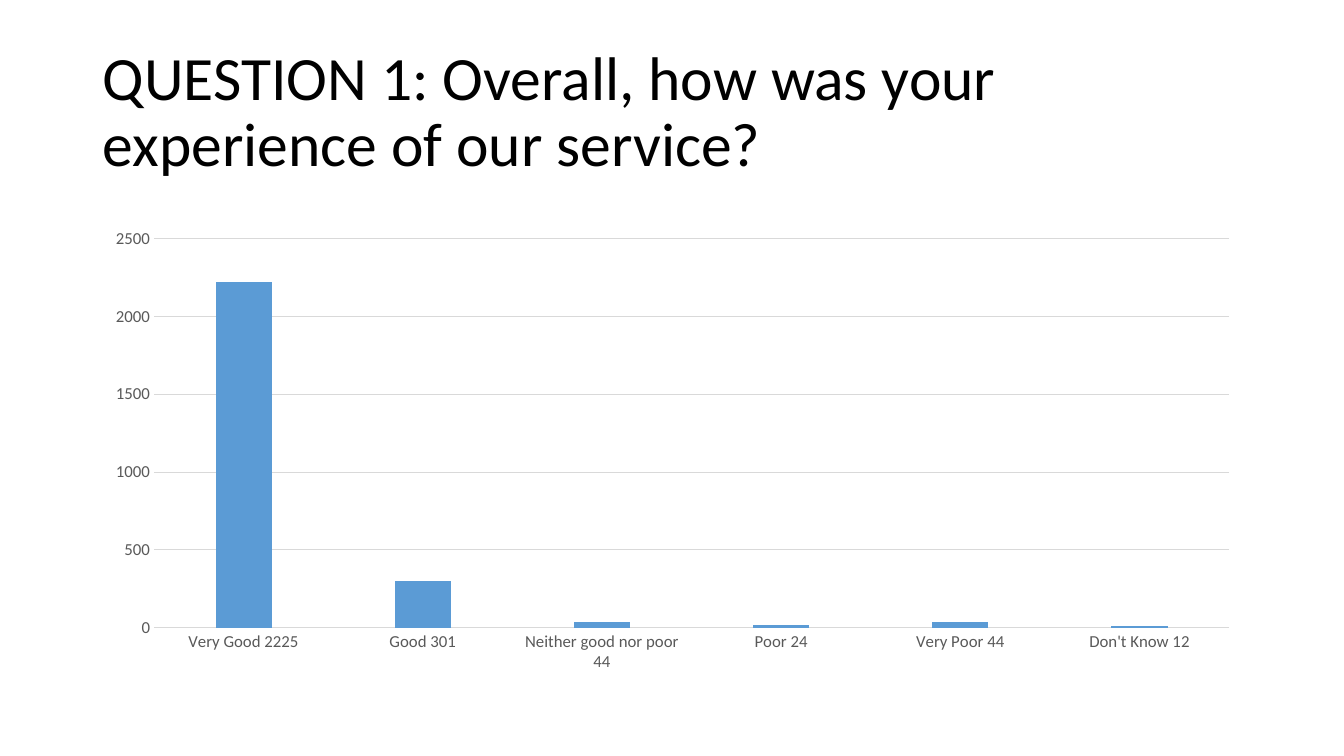
from pptx import Presentation
from pptx import util as u
from pptx.chart.data import CategoryChartData
from pptx.dml.color import RGBColor
from pptx.enum import chart as ch, text

HUES = {"ink": "000000", "label": "595959", "rule": "D9D9D9", "bar": "5B9BD5"}
VOTES = {
    "Very Good": 2225,
    "Good": 301,
    "Neither good nor poor": 44,
    "Poor": 24,
    "Very Poor": 44,
    "Don't Know": 12,
}


def style(font, size, hue):
    font.name = "Calibri"
    font.size = u.Pt(size)
    font.color.rgb = RGBColor.from_string(HUES[hue])


def rule(line):
    """Give a chart line the thin grey look."""
    line.color.rgb = RGBColor.from_string(HUES["rule"])
    line.width = u.Pt(0.75)


deck = Presentation()
deck.slide_width, deck.slide_height = u.Inches(13.33), u.Inches(7.5)
slide = deck.slides.add_slide(deck.slide_layouts[5])

# Title
title = slide.shapes.title
title.left, title.top = u.Inches(0.92), u.Inches(0.4)
title.width, title.height = u.Inches(11.5), u.Inches(1.45)
frame = title.text_frame
frame.text = "QUESTION 1: Overall, how was your experience of our service?"
frame.word_wrap = True
frame.auto_size = text.MSO_AUTO_SIZE.NONE
frame.vertical_anchor = text.MSO_ANCHOR.MIDDLE
para = frame.paragraphs[0]
para.alignment = text.PP_ALIGN.LEFT
para.line_spacing = 0.9
style(para.runs[0].font, 44, "ink")

# Chart: labels carry the exact counts, bars the counts to the nearest ten
data = CategoryChartData()
data.categories = [f"{name} {count}" for name, count in VOTES.items()]
data.add_series("Series 1", [round(count, -1) for count in VOTES.values()])
chart = slide.shapes.add_chart(
    ch.XL_CHART_TYPE.COLUMN_CLUSTERED,
    u.Inches(0.92), u.Inches(2), u.Inches(11.5), u.Inches(4.76), data,
).chart
chart.has_title = False
chart.has_legend = False
style(chart.font, 10, "ink")

plot = chart.plots[0]
plot.gap_width, plot.overlap = 219, -27
plot.vary_by_categories = False
fill = plot.series[0].format.fill
fill.solid()
fill.fore_color.rgb = RGBColor.from_string(HUES["bar"])

base, scale = chart.category_axis, chart.value_axis
for axis in (base, scale):
    axis.major_tick_mark = axis.minor_tick_mark = ch.XL_TICK_MARK.NONE
    style(axis.tick_labels.font, 12, "label")
rule(base.format.line)
scale.format.line.fill.background()
scale.minimum_scale, scale.maximum_scale, scale.major_unit = 0, 2675, 500
scale.tick_labels.number_format = "General"
scale.tick_labels.number_format_is_linked = False
scale.has_major_gridlines = True
rule(scale.major_gridlines.format.line)

deck.save("out.pptx")
